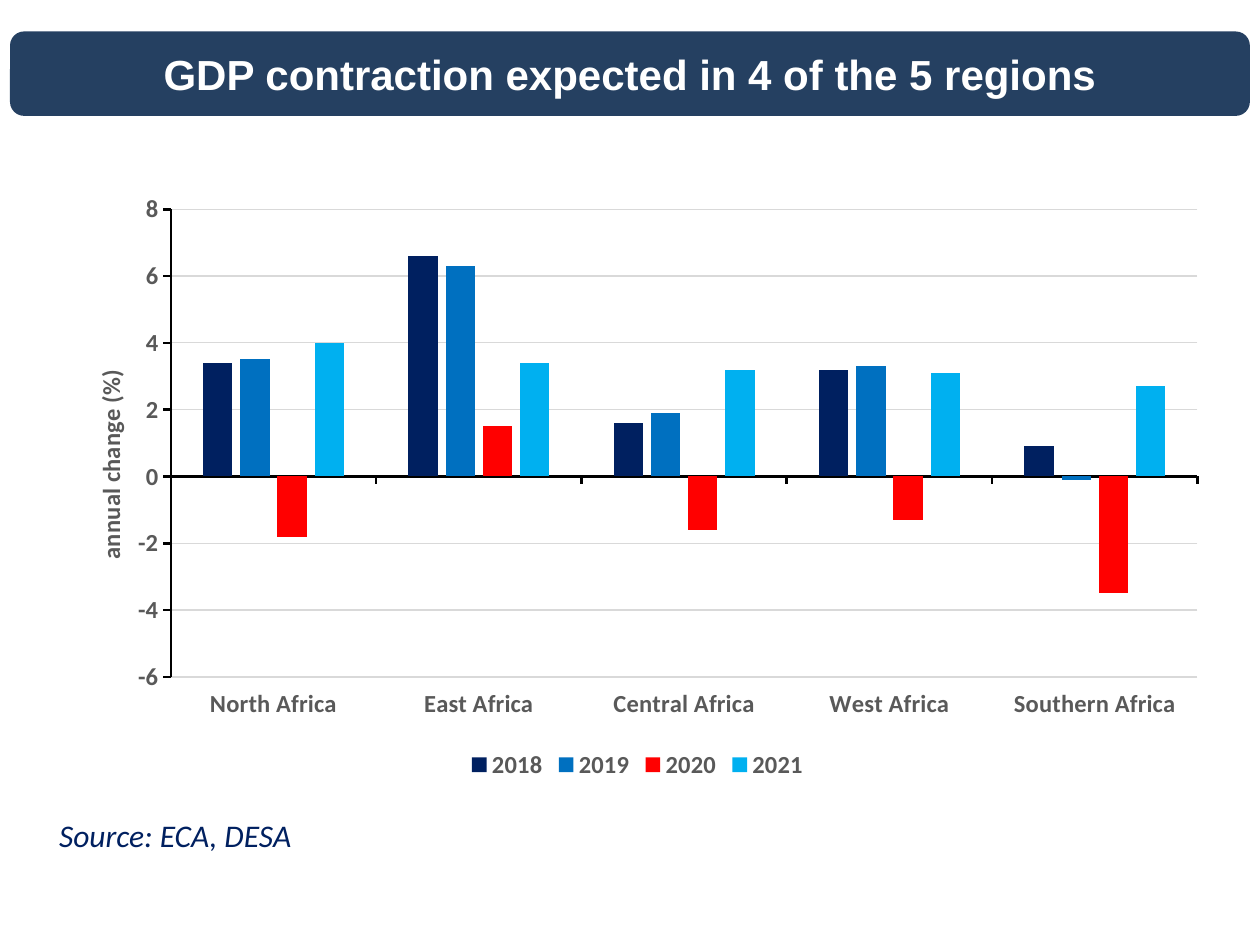
import pptx
import pptx.chart.data
import pptx.dml.color
import pptx.enum.chart
import pptx.enum.shapes
import pptx.enum.text
import pptx.oxml
import pptx.oxml.ns
import pptx.util

Pt = pptx.util.Pt
qn = pptx.oxml.ns.qn

REGIONS = ["North Africa", "East Africa", "Central Africa", "West Africa", "Southern Africa"]
YEARS = [
    ("2018", "002060", [3.4, 6.6, 1.6, 3.2, 0.9]),
    ("2019", "0070C0", [3.5, 6.3, 1.9, 3.3, -0.1]),
    ("2020", "FF0000", [-1.8, 1.5, -1.6, -1.3, -3.5]),
    ("2021", "00B0F0", [4, 3.4, 3.2, 3.1, 2.7]),
]


def color(code):
    return pptx.dml.color.RGBColor.from_string(code)


def style(font, name="Calibri", size=14, ink="595959", bold=False, italic=False):
    font.name, font.size = name, Pt(size)
    font.bold, font.italic = bold, italic
    font.color.rgb = color(ink)


def write(frame, text, align=None, **form):
    para = frame.paragraphs[0]
    para.alignment = align
    run = para.add_run()
    run.text = text
    style(run.font, **form)


def place(node, index, **parts):
    for old in node.findall(qn("c:layout")):
        node.remove(old)
    inner = '<c:layoutTarget val="inner"/>' if "w" in parts else ""
    modes = "".join(f'<c:{key}Mode val="edge"/>' for key in parts if key in "xy")
    sizes = "".join(f'<c:{key} val="{val}"/>' for key, val in parts.items())
    node.insert(index, pptx.oxml.parse_xml(
        f'<c:layout {pptx.oxml.ns.nsdecls("c")}><c:manualLayout>'
        f"{inner}{modes}{sizes}</c:manualLayout></c:layout>"))


class Deck:
    """Holds the style and the current slide."""

    axis = "000000"
    grid = "D9D9D9"
    navy = "002060"
    band = "254061"

    def __init__(self):
        self.show = pptx.Presentation()
        self.show.slide_width, self.show.slide_height = Pt(720), Pt(540)
        self.slide = self.show.slides.add_slide(self.show.slide_layouts[6])

    def banner(self, text, *box):
        kind = pptx.enum.shapes.MSO_SHAPE.ROUNDED_RECTANGLE
        shape = self.slide.shapes.add_shape(kind, *map(Pt, box))
        shape.shadow.inherit = False
        shape.fill.solid()
        shape.fill.fore_color.rgb = color(self.band)
        shape.line.fill.background()
        frame = shape.text_frame
        frame.word_wrap = True
        frame.vertical_anchor = pptx.enum.text.MSO_ANCHOR.MIDDLE
        write(frame, text, align=pptx.enum.text.PP_ALIGN.CENTER,
              name="Arial", size=24, ink="FFFFFF", bold=True)

    def note(self, text, *box):
        frame = self.slide.shapes.add_textbox(*map(Pt, box)).text_frame
        frame.word_wrap = True
        write(frame, text, size=18, ink=self.navy, italic=True)

    def bars(self, label, *box):
        data = pptx.chart.data.CategoryChartData()
        data.categories = REGIONS
        for year, _, vals in YEARS:
            data.add_series(year, vals)
        kind = pptx.enum.chart.XL_CHART_TYPE.COLUMN_CLUSTERED
        chart = self.slide.shapes.add_chart(kind, *map(Pt, box), data).chart
        style(chart.font, size=10, ink=self.axis)
        chart.has_title = False
        plot = chart.plots[0]
        plot.gap_width, plot.overlap, plot.vary_by_categories = 219, -27, False
        for series, (_, fill, _) in zip(plot.series, YEARS):
            series.invert_if_negative = False
            series.format.fill.solid()
            series.format.fill.fore_color.rgb = color(fill)

        for axis in (chart.category_axis, chart.value_axis):
            axis.major_tick_mark = pptx.enum.chart.XL_TICK_MARK.OUTSIDE
            axis.minor_tick_mark = pptx.enum.chart.XL_TICK_MARK.NONE
            axis.format.line.color.rgb = color(self.axis)
            axis.format.line.width = Pt(1.5)
            style(axis.tick_labels.font, bold=True)
        chart.category_axis.tick_label_position = pptx.enum.chart.XL_TICK_LABEL_POSITION.LOW

        scale = chart.value_axis
        scale.minimum_scale, scale.maximum_scale, scale.major_unit = -6, 8, 2
        scale.tick_labels.number_format = "General"
        scale.tick_labels.number_format_is_linked = False
        line = scale.major_gridlines.format.line
        line.color.rgb, line.width = color(self.grid), Pt(0.75)
        title = scale.axis_title
        write(title.text_frame, label, bold=True)
        node = title._element
        turn = node.find(".//" + qn("a:bodyPr"))
        turn.set("rot", "-5400000")
        turn.set("vert", "horz")
        place(node, 1, x=0.03, y=0.3)
        place(chart._chartSpace.find(".//" + qn("c:plotArea")), 0, x=0.1, y=0.04, w=0.88, h=0.78)

        chart.has_legend = True
        chart.legend.position = pptx.enum.chart.XL_LEGEND_POSITION.BOTTOM
        chart.legend.include_in_layout = False
        style(chart.legend.font, bold=True)


def main():
    deck = Deck()
    deck.banner("GDP contraction expected in 4 of the 5 regions", 5.76, 18, 708.48, 48.24)
    deck.note("Source: ECA, DESA", 26.64, 462.96, 289.44, 28.8)
    deck.bars("annual change (%)", 30.96, 105.84, 666.72, 342.72)
    deck.show.save("out.pptx")


if __name__ == "__main__":
    main()
